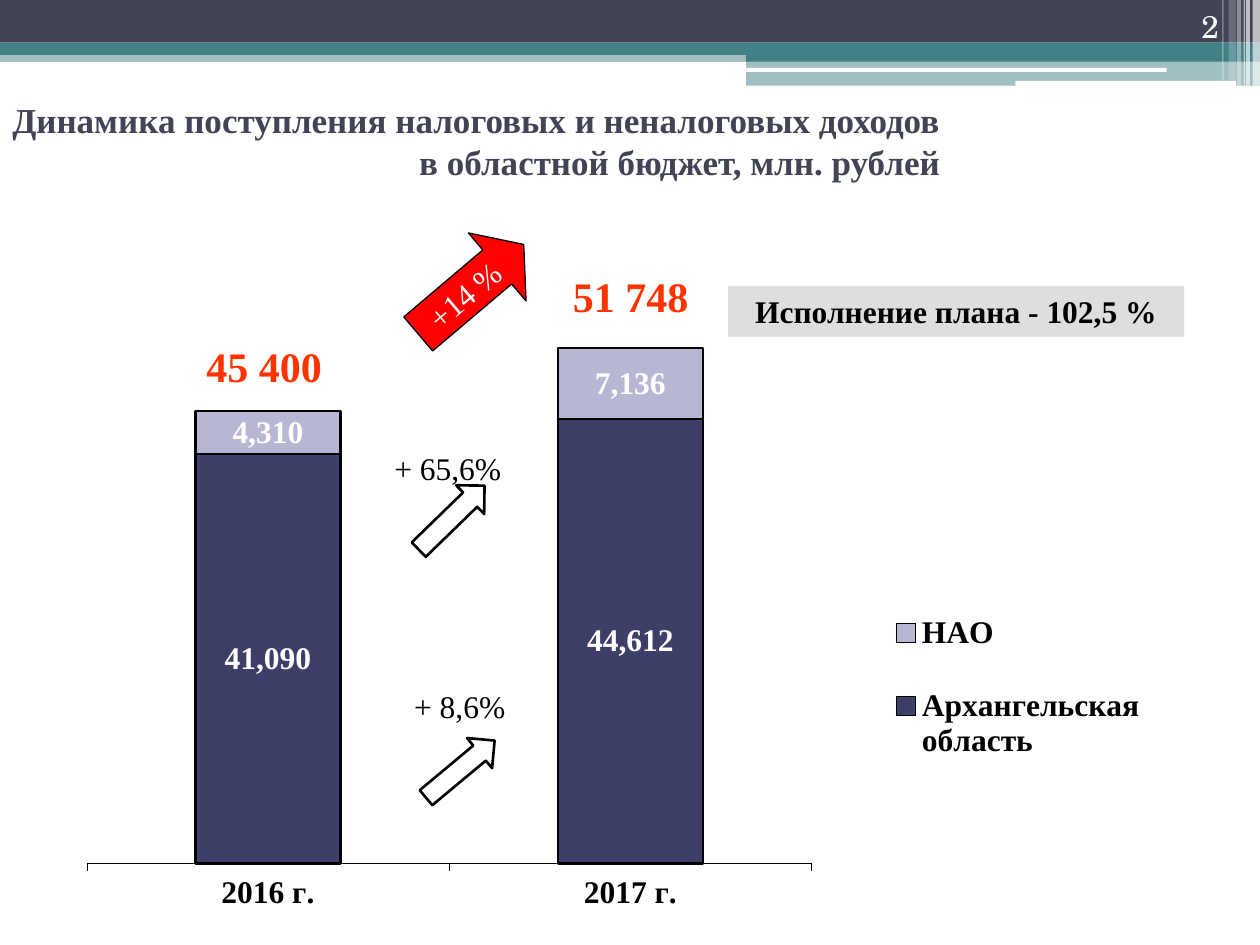
from lxml.etree import SubElement
from pptx import Presentation
from pptx.chart.data import CategoryChartData
from pptx.dml.color import RGBColor
from pptx.enum.chart import XL_CHART_TYPE as ChartType, XL_LEGEND_POSITION as LegendSpot
from pptx.enum.chart import XL_TICK_MARK as TickMark
from pptx.enum.shapes import MSO_SHAPE as Preset
from pptx.enum.text import MSO_ANCHOR as Anchor, PP_ALIGN as Align
from pptx.oxml import parse_xml
from pptx.oxml.ns import nsdecls, qn
from pptx.util import Cm, Pt

SERIF = "Times New Roman"
COLORS = {
    "slate": "424456", "teal": "438086", "white": "FFFFFF", "black": "000000",
    "navy": "3E3F68", "lilac": "B7B7D4", "orange": "FF3300", "red": "FF0000",
    "grey": "DEDEDE",
}
TITLE = "Динамика поступления налоговых и неналоговых доходов\vв областной бюджет, млн. рублей"
YEARS = ["2016 г.", "2017 г."]
INCOME = [
    ("Архангельская область", (41090, 44612), "navy"),
    ("НАО", (4310, 7136), "lilac"),
]
BANDS = [
    (Preset.RECTANGLE, (0, 1.02, 25.4, 0.23), "teal", 50),
    (Preset.RECTANGLE, (0, 0, 25.4, 0.86), "slate", 100),
    (Preset.RECTANGLE, (0, 0.86, 25.4, 0.25), "teal", 100),
    (Preset.RECTANGLE, (15.04, 0.99, 10.36, 0.25), "teal", 100),
    (Preset.RECTANGLE, (15.04, 1.22, 10.36, 0.51), "teal", 50),
    (Preset.ROUNDED_RECTANGLE, (15.01, 1.37, 8.51, 0.08), "white", 100),
    (Preset.ROUNDED_RECTANGLE, (20.47, 1.63, 4.45, 0.1), "white", 100),
]
STRIPES = [
    (25.25, 0.15, 1.73, 65), (25.12, 0.08, 1.73, 65), (25.07, 0.03, 1.73, 60),
    (24.94, 0.08, 1.73, 40), (24.77, 0.15, 1.63, 20), (24.64, 0.03, 1.63, 30),
]
TOTALS = [("45 400", (3.91, 6.73, 3.4, 1.27)), ("51 748", (11.3, 5.33, 3.4, 1.27))]
GROWTH_ARROWS = [((8.18, 10.03, 1.85, 0.81), 315.8), ((8.38, 15.11, 1.8, 0.79), 320.2)]
GROWTH_LABELS = [
    ("+ 8,6%", (8.1, 13.72, 2.36, 1.02), False),
    ("+ 65,6%", (7.7, 8.92, 3.2, 1.02), True),
]


def rgb(name):
    return RGBColor.from_string(COLORS[name])


def style_font(font, size, color, bold=False, name=SERIF):
    font.size, font.bold, font.name = Pt(size), bold, name
    font.color.rgb = rgb(color)


def add_preset(page, preset, place, fill=None, opacity=100, line=None):
    shape = page.shapes.add_shape(preset, *map(Cm, place))
    shape.shadow.inherit = False
    if fill:
        shape.fill.solid()
        shape.fill.fore_color.rgb = rgb(fill)
        if opacity < 100:
            tint = shape.fill._xPr.find(qn("a:solidFill"))[0]
            SubElement(tint, qn("a:alpha"), val=str(opacity * 1000))
    else:
        shape.fill.background()
    if line:
        shape.line.color.rgb = rgb("black")
        shape.line.width = Pt(line)
    else:
        shape.line.fill.background()
    return shape


def write(shape, text, size, color, bold=False, align=Align.LEFT,
          anchor=Anchor.TOP, wrap=True, name=SERIF):
    frame = shape.text_frame
    frame.text = text
    frame.word_wrap, frame.vertical_anchor = wrap, anchor
    para = frame.paragraphs[0]
    para.alignment = align
    style_font(para.font, size, color, bold, name)


def add_text(page, text, place, *style, **layout):
    write(page.shapes.add_textbox(*map(Cm, place)), text, *style, **layout)


def set_layout(parent, place, inner=False):
    old = parent.find(qn("c:layout"))
    target = '<c:layoutTarget val="inner"/>' if inner else ""
    sizes = "".join(f'<c:{key} val="{value}"/>' for key, value in zip("xywh", place))
    layout = parse_xml(
        f'<c:layout {nsdecls("c")}><c:manualLayout>{target}<c:xMode val="edge"/>'
        f'<c:yMode val="edge"/>{sizes}</c:manualLayout></c:layout>')
    if old is not None:
        parent.replace(old, layout)
    else:
        parent.insert(1 if parent.tag == qn("c:legend") else 0, layout)


def add_income_chart(page):
    data = CategoryChartData(number_format="#,##0")
    data.categories = YEARS
    for name, values, _ in INCOME:
        data.add_series(name, values)
    place = map(Cm, (1.3, 4.17, 22.48, 14.88))
    chart = page.shapes.add_chart(ChartType.COLUMN_STACKED, *place, data).chart
    chart.has_title = False
    style_font(chart.font, 18, "black", True)

    value_axis = chart.value_axis
    value_axis.minimum_scale, value_axis.maximum_scale = 0, 60000
    value_axis.has_major_gridlines = False
    value_axis.visible = False
    category_axis = chart.category_axis
    category_axis.major_tick_mark = TickMark.OUTSIDE
    category_axis.format.line.color.rgb = rgb("black")
    category_axis.format.line.width = Pt(0.34)
    style_font(category_axis.tick_labels.font, 18, "black", True)

    plot = chart.plots[0]
    plot.gap_width, plot.overlap = 150, 100
    plot.vary_by_categories = False
    for series, (_, _, color) in zip(plot.series, INCOME):
        series.format.fill.solid()
        series.format.fill.fore_color.rgb = rgb(color)
        series.format.line.color.rgb = rgb("black")
        series.format.line.width = Pt(1.34)
        labels = series.data_labels
        labels.show_value = True
        labels.number_format, labels.number_format_is_linked = "#,##0", False
        style_font(labels.font, 18, "white", True)

    chart.has_legend = True
    legend = chart.legend
    legend.position, legend.include_in_layout = LegendSpot.RIGHT, False
    style_font(legend.font, 18, "black", True)
    set_layout(legend._element, (0.73, 0.5, 0.25, 0.3))
    set_layout(chart._chartSpace.chart.plotArea, (0.02, 0.08, 0.65, 0.81), inner=True)


def main():
    deck = Presentation()
    deck.slide_width, deck.slide_height = Cm(25.4), Cm(19.05)
    page = deck.slides.add_slide(deck.slide_layouts[5])

    for preset, place, color, opacity in BANDS:
        add_preset(page, preset, place, color, opacity)
    for left, width, height, opacity in STRIPES:
        add_preset(page, Preset.RECTANGLE, (left, 0, width, height), "white", opacity)

    title = page.shapes.title
    title.left, title.top, title.width, title.height = map(Cm, (0, 1.57, 25.4, 2.51))
    write(title, TITLE, 20, "slate", True, Align.RIGHT, Anchor.MIDDLE)
    title.text_frame.margin_left, title.text_frame.margin_right = Cm(0), Cm(6.45)

    add_income_chart(page)
    for text, place in TOTALS:
        add_text(page, text, place, 24, "orange", True)

    total_arrow = add_preset(page, Preset.RIGHT_ARROW, (8.1, 4.93, 2.79, 1.8), "red", line=0.75)
    total_arrow.adjustments[1] = 0.39
    total_arrow.rotation = 319.7
    write(total_arrow, "+14 %", 18, "white", False, Align.CENTER, Anchor.MIDDLE, False)

    plan = add_preset(page, Preset.RECTANGLE, (14.68, 5.77, 9.19, 1.02), "grey")
    write(plan, "Исполнение плана - 102,5 %", 18, "black", True, Align.CENTER)

    for place, angle in GROWTH_ARROWS:
        add_preset(page, Preset.RIGHT_ARROW, place, line=1.5).rotation = angle
    for text, place, wrap in GROWTH_LABELS:
        add_text(page, text, place, 18, "black", wrap=wrap)
    add_text(page, "2", (22.71, 0, 2.11, 1.02), 18, "white", align=Align.RIGHT,
             anchor=Anchor.BOTTOM, name="TeX Gyre Schola")
    deck.save("out.pptx")


if __name__ == "__main__":
    main()
